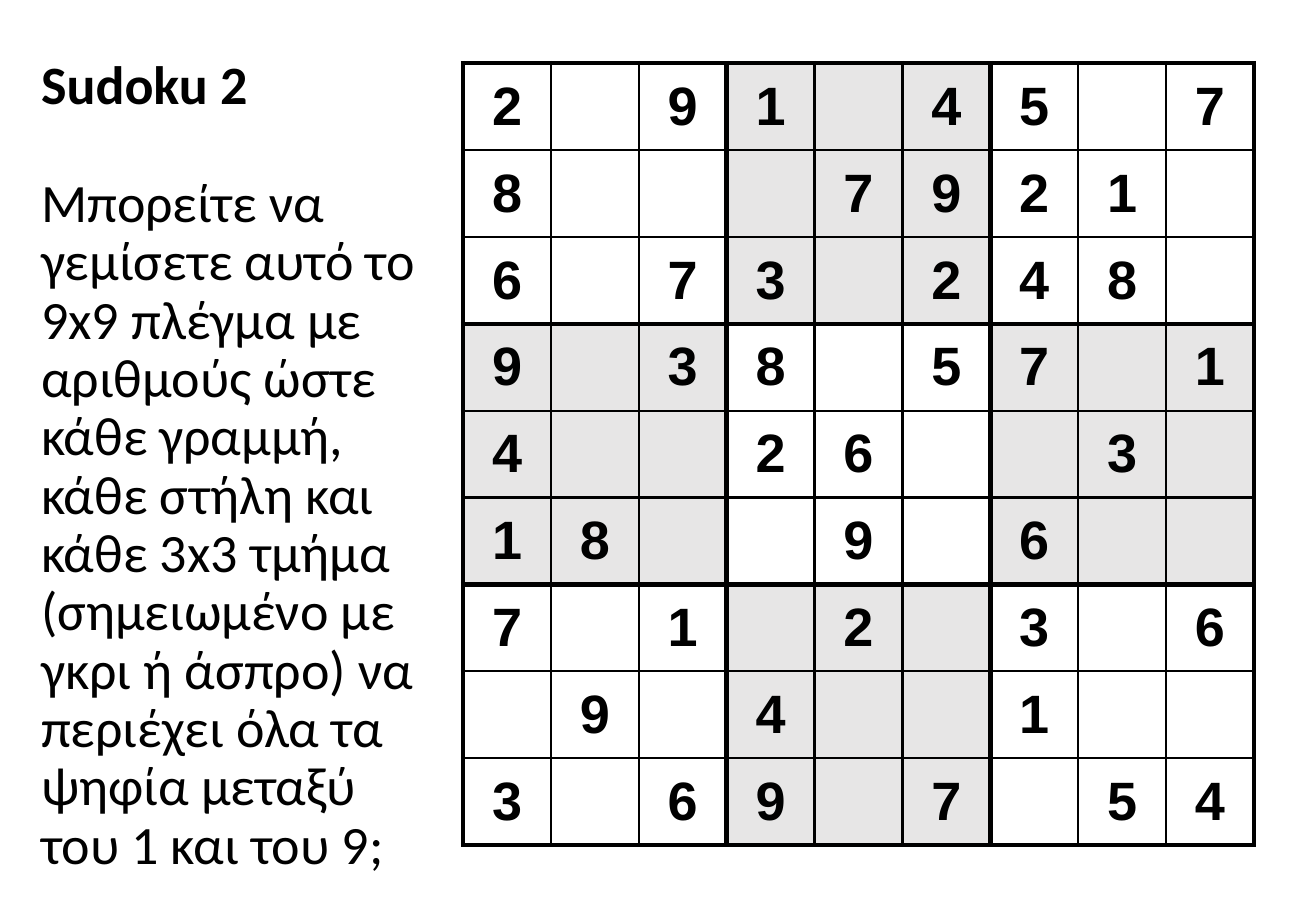
from typing import NamedTuple

from lxml.etree import SubElement as Sub
from pptx import Presentation
from pptx.dml.color import RGBColor as Rgb
from pptx.enum.text import MSO_ANCHOR as Anchor, PP_ALIGN as Align
from pptx.oxml import parse_xml
from pptx.oxml.ns import nsdecls, qn
from pptx.util import Pt

COLORS = {"ink": "000000", "white": "FFFFFF", "gray": "E7E6E6"}
SIZE = 32
THIN, THICK = 1.5, 3
COL, ROW = 52.08, 51.52
GRID = (
    "2.91.45.7",
    "8...7921.",
    "6.73.248.",
    "9.38.57.1",
    "4..26..3.",
    "18..9.6..",
    "7.1.2.3.6",
    ".9.4..1..",
    "3.69.7.54",
)


class Para(NamedTuple):
    lines: tuple[str, ...]
    bold: bool
    gap: float


PARAS = (
    Para(("Sudoku 2",), True, 0),
    Para(("Μπορείτε να γεμίσετε αυτό το 9x9 πλέγμα με αριθμούς ώστε "
          "κάθε γραμμή, κάθε στήλη και κάθε 3x3 τμήμα",
          "(σημειωμένο με γκρι ή άσπρο) να περιέχει όλα τα ψηφία "
          "μεταξύ του 1 και του 9;"), False, 35),
)


def add_run(para, text: str, face: str, bold: bool) -> None:
    run = para.add_run()
    run.text = text
    run.font.name = face
    run.font.size = Pt(SIZE)
    run.font.bold = bold
    run.font.color.rgb = Rgb.from_string(COLORS["ink"])


def add_text(slide) -> None:
    frame = slide.shapes.add_textbox(Pt(17.3), Pt(31), Pt(247.7), Pt(509)).text_frame
    frame.word_wrap = True
    for i, item in enumerate(PARAS):
        para = frame.add_paragraph() if i else frame.paragraphs[0]
        para.line_spacing = 0.9
        para.space_before = Pt(item.gap)
        for j, line in enumerate(item.lines):
            if j:
                para.add_line_break()
            add_run(para, line, "Calibri", item.bold)


def set_edges(cell, row: int, col: int) -> None:
    """Draw thick lines round each 3x3 block and thin ones inside it."""
    props = cell._tc.get_or_add_tcPr()
    edges = {"L": col % 3 == 0, "R": col % 3 == 2,
             "T": row % 3 == 0, "B": row % 3 == 2}
    for i, (side, thick) in enumerate(edges.items()):
        width = Pt(THICK if thick else THIN)
        line = parse_xml(f'<a:ln{side} {nsdecls("a")} w="{width}"/>')
        fill = Sub(line, qn("a:solidFill"))
        Sub(fill, qn("a:srgbClr"), val=COLORS["ink"])
        props.insert(i, line)


def fill_cell(cell, row: int, col: int, digit: str) -> None:
    shade = "gray" if (row // 3 + col // 3) % 2 else "white"
    cell.fill.solid()
    cell.fill.fore_color.rgb = Rgb.from_string(COLORS[shade])
    cell.vertical_anchor = Anchor.MIDDLE
    cell.margin_left = cell.margin_right = Pt(5.8)
    cell.margin_top = cell.margin_bottom = Pt(3.6)
    set_edges(cell, row, col)
    if digit != ".":
        para = cell.text_frame.paragraphs[0]
        para.alignment = Align.CENTER
        add_run(para, digit, "Arial", True)


def add_grid(slide) -> None:
    count = len(GRID)
    table = slide.shapes.add_table(count, count, Pt(274.5), Pt(37.4),
                                   Pt(COL * count), Pt(ROW * count)).table
    table.first_row = table.horz_banding = False
    for col in table.columns:
        col.width = Pt(COL)
    for r, digits in enumerate(GRID):
        table.rows[r].height = Pt(ROW)
        for c, digit in enumerate(digits):
            fill_cell(table.cell(r, c), r, c, digit)


def main() -> None:
    deck = Presentation()
    deck.slide_width, deck.slide_height = Pt(780), Pt(540)
    slide = deck.slides.add_slide(deck.slide_layouts[6])
    add_text(slide)
    add_grid(slide)
    deck.save("out.pptx")


if __name__ == "__main__":
    main()
